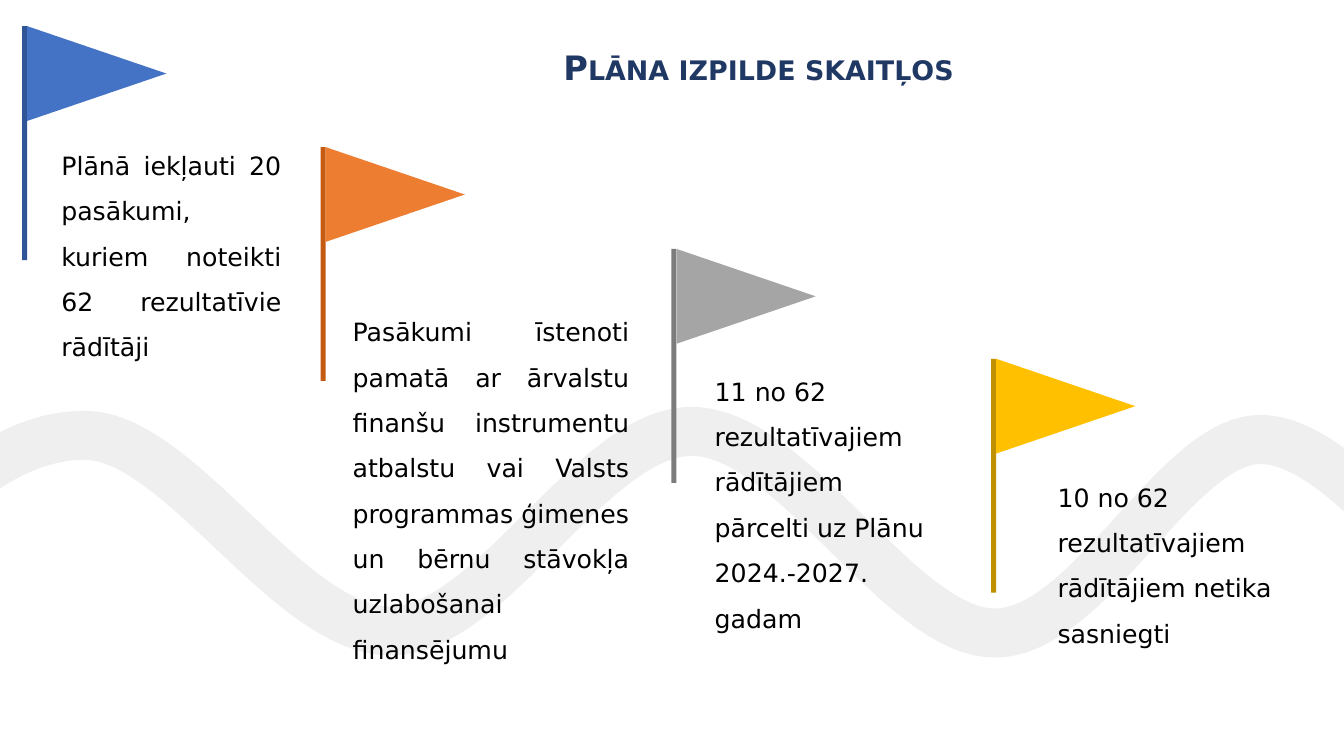
from itertools import chain

from lxml import etree
from pptx import Presentation
from pptx.dml.color import RGBColor
from pptx.enum.shapes import MSO_SHAPE
from pptx.enum.text import MSO_ANCHOR, MSO_AUTO_SIZE, PP_ALIGN
from pptx.oxml.ns import qn
from pptx.util import Inches, Pt

RECTANGLE = MSO_SHAPE.RECTANGLE
TRIANGLE = MSO_SHAPE.ISOSCELES_TRIANGLE
TOP, BOTTOM = MSO_ANCHOR.TOP, MSO_ANCHOR.BOTTOM
LEFT, JUSTIFY = PP_ALIGN.LEFT, PP_ALIGN.JUSTIFY
FIT_SHAPE = MSO_AUTO_SIZE.SHAPE_TO_FIT_TEXT

ROAD_START = (-1.7, 6.16)
ROAD_CURVES = [
    ((-0.88, 5.23), (-0.07, 4.3), (0.86, 4.32)),
    ((1.79, 4.34), (2.88, 6.27), (3.88, 6.26)),
    ((4.88, 6.25), (5.87, 4.28), (6.86, 4.28)),
    ((7.86, 4.28), (8.92, 6.27), (9.86, 6.28)),
    ((10.8, 6.29), (11.66, 4.36), (12.5, 4.36)),
    ((13.34, 4.36), (14.39, 5.99), (14.88, 6.3)),
]
MILESTONES = [
    ((0.22, 0.26), "2F5597", "4472C4", (0.51, 1.33, 2.38, 2.31), JUSTIFY,
     "Plānā iekļauti 20 pasākumi, kuriem noteikti 62 rezultatīvie rādītāji"),
    ((3.18, 1.46), "C55A11", "ED7D31", (3.4, 2.97, 2.94, 3.67), JUSTIFY,
     "Pasākumi īstenoti pamatā ar ārvalstu finanšu instrumentu atbalstu vai "
     "Valsts programmas ģimenes un bērnu stāvokļa uzlabošanai finansējumu"),
    ((6.66, 2.47), "7C7C7C", "A5A5A5", (6.99, 3.56, 2.38, 2.77), LEFT,
     "11 no 62 rezultatīvajiem rādītājiem pārcelti uz Plānu 2024.-2027. gadam"),
    ((9.83, 3.56), "BF9000", "FFC000", (10.39, 4.62, 2.38, 1.86), LEFT,
     "10 no 62 rezultatīvajiem rādītājiem netika sasniegti"),
]


def color(value):
    return RGBColor.from_string(value)


class SlideBuilder:
    font = "DejaVu Sans"

    def __init__(self, slide):
        self.slide = slide

    def road(self, start, curves, line_color, width, opacity):
        builder = self.slide.shapes.build_freeform(*map(Inches, start))
        builder.add_line_segments(
            [(Inches(x), Inches(y)) for x, y in chain(*curves)], close=False)
        road = builder.convert_to_shape()
        self.bend(road)
        road.shadow.inherit = False
        road.fill.background()
        road.line.color.rgb = color(line_color)
        road.line.width = Pt(width)
        shade = road._element.spPr.find(".//" + qn("a:ln")).find(".//" + qn("a:srgbClr"))
        etree.SubElement(shade, qn("a:alpha"), val=str(opacity * 1000))

    def bend(self, road):
        outline = road._element.spPr.find(".//" + qn("a:path"))
        segments = outline.findall(qn("a:lnTo"))
        for first in range(0, len(segments), 3):
            curve = etree.SubElement(outline, qn("a:cubicBezTo"))
            for segment in segments[first:first + 3]:
                curve.append(segment[0])
                outline.remove(segment)

    def block(self, group, kind, box, fill):
        block = group.shapes.add_shape(kind, *map(Inches, box))
        block.shadow.inherit = False
        block.fill.solid()
        block.fill.fore_color.rgb = color(fill)
        block.line.fill.background()
        return block

    def flag(self, left, top, pole_color, pennant_color):
        group = self.slide.shapes.add_group_shape()
        self.block(group, RECTANGLE, (left, top, 0.05, 2.32), pole_color)
        pennant = self.block(group, TRIANGLE,
                             (left + 0.27, top - 0.22, 0.94, 1.38), pennant_color)
        pennant.rotation = 90

    def text(self, box, wording, size=18, ink="000000", align=LEFT,
             anchor=BOTTOM, spacing=1.5, bold=False):
        frame = self.slide.shapes.add_textbox(*map(Inches, box)).text_frame
        frame.word_wrap = True
        frame.auto_size = FIT_SHAPE
        frame.vertical_anchor = anchor
        paragraph = frame.paragraphs[0]
        paragraph.text = wording
        paragraph.alignment = align
        paragraph.line_spacing = spacing
        paragraph.font.name = self.font
        paragraph.font.size = Pt(size)
        paragraph.font.bold = bold
        paragraph.font.color.rgb = color(ink)
        return paragraph

    def title(self, box, wording):
        heading = self.text(box, wording, size=24, ink="203864",
                            anchor=TOP, spacing=1.0, bold=True)
        heading.runs[0].font._element.set("cap", "small")


def main():
    deck = Presentation()
    deck.slide_width = Inches(13.33)
    deck.slide_height = Inches(7.5)
    builder = SlideBuilder(deck.slides.add_slide(deck.slide_layouts[6]))

    builder.road(ROAD_START, ROAD_CURVES, "D9D9D9", 35, 40)
    for (left, top), pole, pennant, box, align, wording in MILESTONES:
        builder.flag(left, top, pole, pennant)
        builder.text(box, wording, align=align)
    builder.title((5.49, 0.42, 5.92, 0.5), "Plāna izpilde skaitļos")

    deck.save("out.pptx")


if __name__ == "__main__":
    main()
